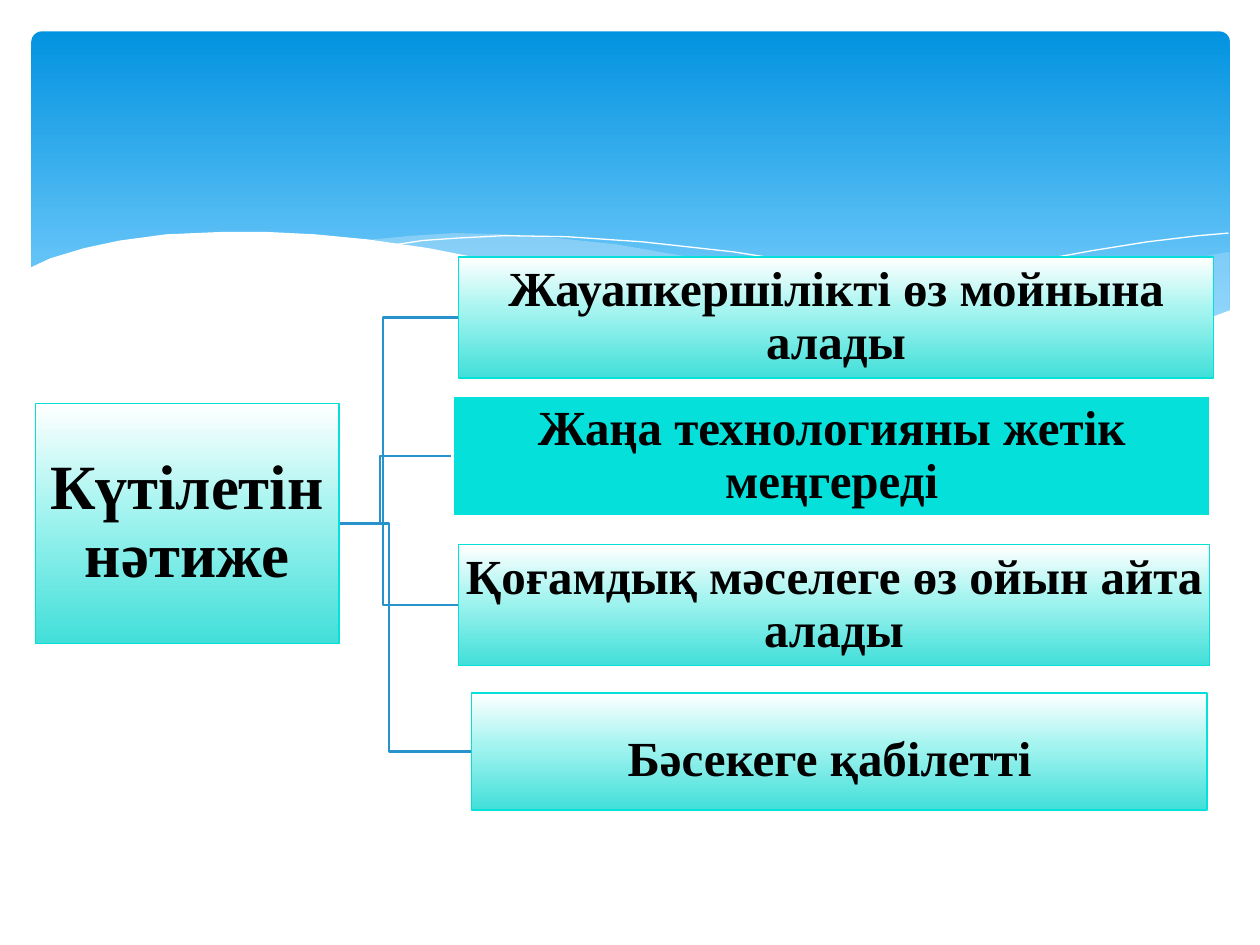
from lxml import etree
from pptx import Presentation
from pptx.dml.color import RGBColor
from pptx.enum.shapes import MSO_CONNECTOR, MSO_SHAPE
from pptx.enum.text import MSO_ANCHOR, PP_ALIGN
from pptx.oxml.ns import qn
from pptx.util import Inches, Pt

RECT, ROUND = MSO_SHAPE.RECTANGLE, MSO_SHAPE.ROUNDED_RECTANGLE
ELBOW = MSO_CONNECTOR.ELBOW
MIDDLE, CENTER = MSO_ANCHOR.MIDDLE, PP_ALIGN.CENTER

BLACK = RGBColor(0x00, 0x00, 0x00)
WHITE = RGBColor(0xFF, 0xFF, 0xFF)
SKY = RGBColor(0x02, 0x93, 0xE0)
SKY_LIGHT = RGBColor(0x83, 0xD3, 0xFE)
MIST = RGBColor(0xC6, 0xE7, 0xFC)
TEAL = RGBColor(0x05, 0xE0, 0xDB)
TEAL_LIGHT = RGBColor(0xA5, 0xF4, 0xF0)
TEAL_MID = RGBColor(0x42, 0xDF, 0xD9)
LINK = RGBColor(0x27, 0x92, 0xCB)

SKY_STOPS = [(0, SKY), (90, SKY_LIGHT)]
TEAL_STOPS = [(0, WHITE), (44, TEAL_LIGHT), (100, TEAL_MID)]
FONT = "Times New Roman"

RIGHT_WAVE = [
    (97.5, 13.3), (93.5, 18), (89.1, 24), (86.1, 28.7), (77.9, 41.3), (72.9, 48.7),
    (66.1, 56.7), (70.5, 60.7), (74.5, 63.3), (80.3, 65.3), (85.4, 64), (89.7, 60),
    (93.5, 54.7), (97.6, 44.7), (97.6, 13.3)]
BACK_WAVE = [
    (89.3, 62), (83.7, 56.7), (77.5, 49.3), (70.6, 40), (62.9, 28), (58.4, 20.7),
    (54.1, 15.3), (48.9, 9.3), (44.2, 6), (39.9, 4), (36.1, 3.3), (32.8, 4.7),
    (28.6, 7.3), (34.2, 12.7), (40.4, 20.7), (44.9, 28), (53, 40), (60.1, 50),
    (66.5, 57.3), (72.2, 62.7), (78.5, 65.3), (84.8, 64.7)]
LEFT_CREST = [
    (30.9, 10), (33.5, 7.3), (36.3, 6), (40.1, 4.7), (45, 5.3), (51, 8),
    (58.2, 13.3), (66.5, 22), (72.7, 30.7), (79.5, 40.7), (86.9, 54), (90.7, 61.3)]
RIGHT_CREST = [
    (61.3, 51.3), (67.2, 40.7), (74.8, 28.7), (80.6, 20), (86.6, 12.7), (91, 8),
    (95.1, 4.7), (97.5, 3.3)]
FRONT_WAVE = [
    (97.7, 44), (95, 50.7), (91, 58), (86.3, 62.7), (80.9, 64.7), (74.4, 62.7),
    (68.8, 58.7), (62.6, 52), (55.5, 43.3), (44.7, 26.7), (39.1, 18), (34, 11.3),
    (29.2, 6.7), (25, 4), (21.1, 2.7), (17.7, 2.7), (13.2, 4), (9.5, 7.3),
    (6.7, 11.3), (4, 16.7), (2.3, 22), (2.3, 99.3), (97.7, 99.3)]

ROOT = ("Күтілетін нәтиже", (2.8, 42.67, 24.1, 25.47))
RESULTS = [
    ("Жауапкершілікті өз мойнына алады", (36.4, 27.2, 59.9, 12.8)),
    ("Жаңа технологияны жетік меңгереді", (35.9, 41.87, 60.2, 12.8)),
    ("Қоғамдық мәселеге өз ойын айта алады", (36.4, 57.6, 59.6, 12.8)),
    ("Бәсекеге қабілетті", (37.4, 73.33, 58.4, 12.4)),
]
ACCENT = 1


def inside(box, share):
    x, y, w, h = box
    px, py, pw, ph = share
    return (round(x + w * px / 100), round(y + h * py / 100),
            round(w * pw / 100), round(h * ph / 100))


def fill_gradient(sp, stops):
    sp.fill.gradient()
    sp.fill.gradient_angle = 270
    gs_list = sp._element.spPr.find(qn("a:gradFill")).find(qn("a:gsLst"))
    for old in list(gs_list):
        gs_list.remove(old)
    for pos, color in stops:
        gs = etree.SubElement(gs_list, qn("a:gs"), pos=str(pos * 1000))
        etree.SubElement(gs, qn("a:srgbClr"), val=str(color))


def add_curve(s, box, points, fill=None, alpha=100):
    spots = [inside(box, (x, y, 0, 0))[:2] for x, y in points]
    builder = s.shapes.build_freeform(*spots[0])
    builder.add_line_segments(spots[1:], close=fill is not None)
    sp = builder.convert_to_shape()
    sp.shadow.inherit = False
    if fill is None:
        sp.fill.background()
        sp.line.color.rgb = WHITE
        sp.line.width = Pt(0)
        return
    sp.line.fill.background()
    sp.fill.solid()
    sp.fill.fore_color.rgb = fill
    if alpha < 100:
        color = sp._element.spPr.find(qn("a:solidFill"))[0]
        etree.SubElement(color, qn("a:alpha"), val=str(alpha * 1000))


def add_header(s, box):
    sp = s.shapes.add_shape(ROUND, *inside(box, (2.5, 3.33, 95.1, 36)))
    sp.adjustments[0] = 0.03
    sp.shadow.inherit = False
    sp.line.fill.background()
    fill_gradient(sp, SKY_STOPS)
    waves = inside(box, (0, 24, 100, 20))
    add_curve(s, waves, RIGHT_WAVE, MIST, 29)
    add_curve(s, waves, BACK_WAVE, MIST, 40)
    add_curve(s, waves, LEFT_CREST)
    add_curve(s, waves, RIGHT_CREST)
    add_curve(s, waves, FRONT_WAVE, WHITE)


def add_link(s, start, end):
    link = s.shapes.add_connector(ELBOW, *start, *end)
    link.line.color.rgb = LINK
    link.line.width = Pt(1.25)
    etree.SubElement(link._element.spPr, qn("a:effectLst"))


def add_card(s, box, text, size, inset, accent=False):
    sp = s.shapes.add_shape(RECT, *box)
    sp.shadow.inherit = False
    if accent:
        sp.fill.solid()
        sp.fill.fore_color.rgb = TEAL
    else:
        fill_gradient(sp, TEAL_STOPS)
    sp.line.color.rgb = WHITE if accent else TEAL
    sp.line.width = Pt(2 if accent else 0.75)
    tf = sp.text_frame
    tf.word_wrap = True
    tf.vertical_anchor = MIDDLE
    tf.margin_left = tf.margin_right = tf.margin_top = tf.margin_bottom = Inches(inset)
    p = tf.paragraphs[0]
    p.alignment = CENTER
    p.line_spacing = 0.9
    r = p.add_run()
    r.text = text
    p.font.name = FONT
    p.font.size = Pt(size)
    p.font.bold = True
    p.font.color.rgb = BLACK
    return p


def add_tree(s, box):
    root_text, root_share = ROOT
    root = inside(box, root_share)
    start = inside(box, (24.4, 0, 0, 0))[0], root[1] + root[3] // 2
    cards = [(text, inside(box, share)) for text, share in RESULTS]
    for _, (x, y, _, h) in cards:
        add_link(s, start, (x, y + h // 2))
    add_card(s, root, root_text, 36, 0.03)
    for i, (text, card) in enumerate(cards):
        p = add_card(s, card, text, 28, 0.02, i == ACCENT)
    r = p.add_run()
    r.text = " "
    r.font.size = Pt(44)


def main():
    prs = Presentation()
    prs.slide_width, prs.slide_height = Inches(10), Inches(7.5)
    s = prs.slides.add_slide(prs.slide_layouts[6])
    page = (0, 0, prs.slide_width, prs.slide_height)
    add_header(s, page)
    add_tree(s, page)
    prs.save("out.pptx")


if __name__ == "__main__":
    main()
